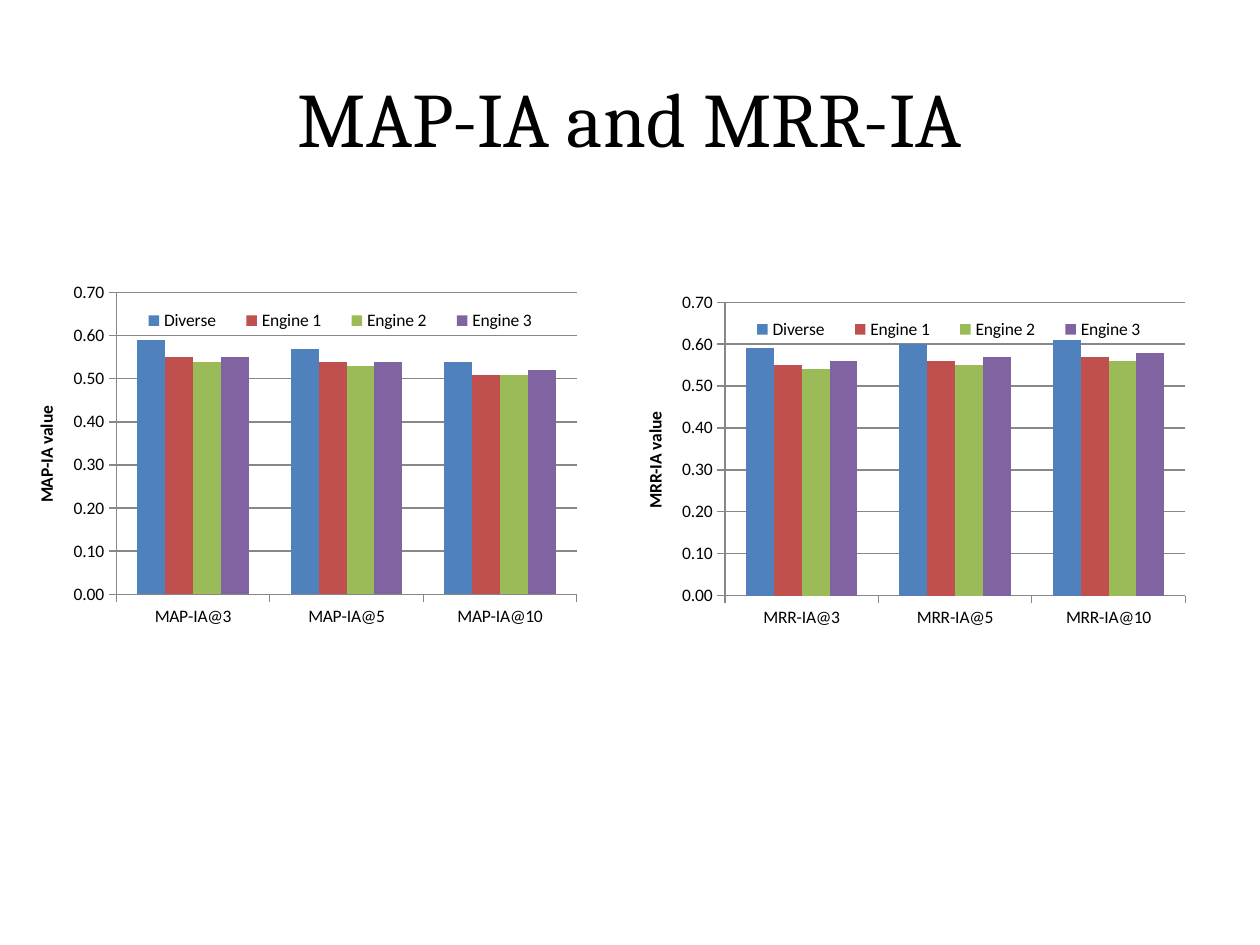
from lxml import etree
from pptx import Presentation
from pptx.chart.data import CategoryChartData
from pptx.dml.color import RGBColor
from pptx.enum import chart as ch, text
from pptx.oxml.ns import qn
from pptx.util import Inches, Pt

COLORS = {
    "text": "000000", "grid": "878787",
    "Diverse": "4F81BD", "Engine 1": "C0504D",
    "Engine 2": "9BBB59", "Engine 3": "8064A2",
}
CUTOFFS = (3, 5, 10)
MAP_VALUES = {
    "Diverse": (0.59, 0.57, 0.54), "Engine 1": (0.55, 0.54, 0.51),
    "Engine 2": (0.54, 0.53, 0.51), "Engine 3": (0.55, 0.54, 0.52),
}
MRR_VALUES = {
    "Diverse": (0.59, 0.6, 0.61), "Engine 1": (0.55, 0.56, 0.57),
    "Engine 2": (0.54, 0.55, 0.56), "Engine 3": (0.56, 0.57, 0.58),
}


def rgb(name):
    return RGBColor.from_string(COLORS[name])


def style_font(font, size, name, bold=False):
    font.size, font.name, font.bold = Pt(size), name, bold
    font.color.rgb = rgb("text")


def set_layout(parent, index, box, inner=False):
    """Place a chart part at box, given as fractions of the chart."""
    for old in parent.findall(qn("c:layout")):
        parent.remove(old)
    layout = etree.Element(qn("c:layout"))
    manual = etree.SubElement(layout, qn("c:manualLayout"))
    settings = [("layoutTarget", "inner")] if inner else []
    settings += [("xMode", "edge"), ("yMode", "edge")]
    settings += zip("xywh", box)
    for tag, value in settings:
        etree.SubElement(manual, qn("c:" + tag)).set("val", str(value))
    parent.insert(index, layout)


def add_title(s, box, title):
    sp = s.shapes.title
    sp.left, sp.top, sp.width, sp.height = map(Inches, box)
    tf = sp.text_frame
    tf.vertical_anchor = text.MSO_ANCHOR.MIDDLE
    p = tf.paragraphs[0]
    p.alignment = text.PP_ALIGN.CENTER
    r = p.add_run()
    r.text = title
    style_font(r.font, 44, "Cambria")


def add_metric_chart(s, box, metric, values):
    data = CategoryChartData(number_format="0.00")
    data.categories = [f"{metric}@{k}" for k in CUTOFFS]
    for name, scores in values.items():
        data.add_series(name, scores)
    chart = s.shapes.add_chart(
        ch.XL_CHART_TYPE.COLUMN_CLUSTERED, *map(Inches, box), data).chart
    chart.has_title = False
    style_font(chart.font, 10, "Calibri")

    plot = chart.plots[0]
    plot.gap_width, plot.overlap, plot.vary_by_categories = 150, 0, False
    for series in plot.series:
        series.format.fill.solid()
        series.format.fill.fore_color.rgb = rgb(series.name)

    scale = chart.value_axis
    scale.minimum_scale, scale.maximum_scale, scale.major_unit = 0, 0.7, 0.1
    scale.tick_labels.number_format = "#,##0.00"
    scale.tick_labels.number_format_is_linked = False
    scale.has_major_gridlines = True
    p = scale.axis_title.text_frame.paragraphs[0]
    r = p.add_run()
    r.text = f"{metric} value"
    style_font(r.font, 10, "Calibri", bold=True)
    for axis in (scale, chart.category_axis):
        axis.major_tick_mark = ch.XL_TICK_MARK.OUTSIDE
        axis.minor_tick_mark = ch.XL_TICK_MARK.NONE
    for part in (scale, chart.category_axis, scale.major_gridlines):
        part.format.line.color.rgb = rgb("grid")
        part.format.line.width = Pt(0.75)

    chart.has_legend = True
    legend = chart.legend
    legend.position = ch.XL_LEGEND_POSITION.RIGHT
    legend.include_in_layout = False
    style_font(legend.font, 10, "Calibri")
    set_layout(legend._element, 1, (0.16, 0.08, 0.75, 0.09))
    plot_area = chart._chartSpace.chart.plotArea
    set_layout(plot_area, 0, (0.147, 0.051, 0.798, 0.798), inner=True)


def main():
    prs = Presentation()
    prs.slide_width, prs.slide_height = Inches(10), Inches(7.5)
    s = prs.slides.add_slide(prs.slide_layouts[5])
    add_title(s, (0.5, 0.3, 9, 1.25), "MAP-IA and MRR-IA")
    add_metric_chart(s, (0.25, 2.17, 4.58, 3), "MAP-IA", MAP_VALUES)
    add_metric_chart(s, (5.08, 2.25, 4.58, 2.92), "MRR-IA", MRR_VALUES)
    prs.save("out.pptx")


if __name__ == "__main__":
    main()
